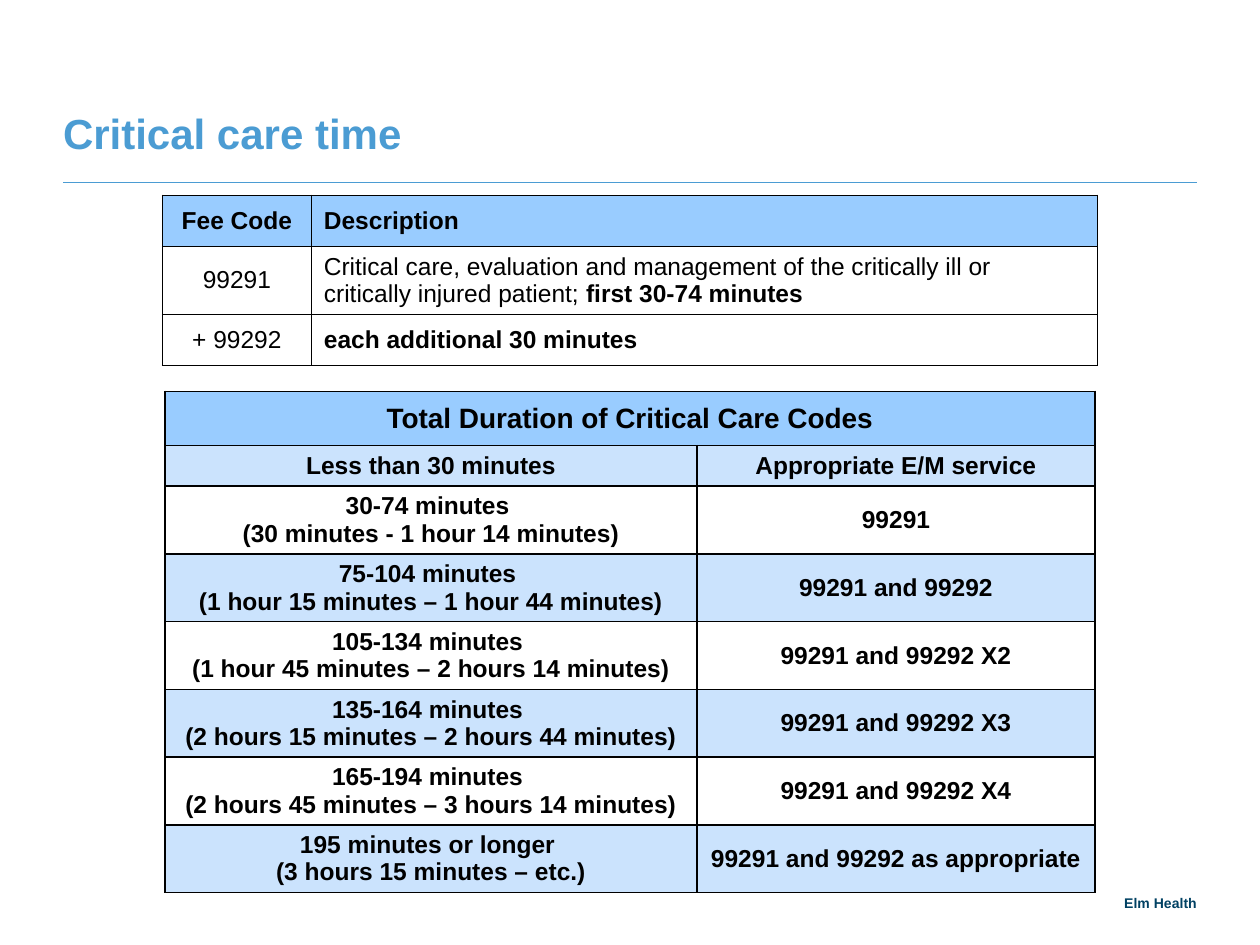
import pptx
import pptx.dml.color
import pptx.enum.shapes
import pptx.enum.text
import pptx.util
from lxml import etree
from pptx.oxml.ns import qn

Pt = pptx.util.Pt
ALIGN = pptx.enum.text.PP_ALIGN
ANCHOR = pptx.enum.text.MSO_ANCHOR

BLACK, WHITE = "000000", "FFFFFF"
SKY, NAVY = "4B9CD3", "004163"
HEADER_BLUE, BAND_BLUE = "99CCFF", "CBE3FD"

# Each cell is a list of paragraphs, each paragraph a list of (text, bold) runs.
CODES = [
    ([[("Fee Code", True)]], [[("Description", True)]]),
    ([[("99291", False)]],
     [[("Critical care, evaluation and management of the critically ill or "
        "critically injured patient; ", False), ("first 30-74 minutes", True)]]),
    ([[("+ 99292", False)]], [[("each additional 30 minutes", True)]]),
]

DURATIONS = [
    (["Less than 30 minutes"], "Appropriate E/M service"),
    (["30-74 minutes ", "(30 minutes - 1 hour 14 minutes)"], "99291"),
    (["75-104 minutes ", "(1 hour 15 minutes – 1 hour 44 minutes)"], "99291 and 99292"),
    (["105-134 minutes ", "(1 hour 45 minutes – 2 hours 14 minutes)"], "99291 and 99292 X2"),
    (["135-164 minutes ", "(2 hours 15 minutes – 2 hours 44 minutes)"], "99291 and 99292 X3"),
    (["165-194 minutes ", "(2 hours 45 minutes – 3 hours 14 minutes)"], "99291 and 99292 X4"),
    (["195 minutes or longer ", "(3 hours 15 minutes – etc.)"], "99291 and 99292 as appropriate"),
]


def rgb(value):
    return pptx.dml.color.RGBColor.from_string(value)


def write(frame, paragraphs, size=14, color=BLACK, align=ALIGN.LEFT, spacing=None):
    """Fill a text frame with paragraphs of (text, bold) runs."""
    for index, runs in enumerate(paragraphs):
        paragraph = frame.paragraphs[0] if index == 0 else frame.add_paragraph()
        paragraph.alignment = align
        if spacing:
            paragraph.line_spacing = Pt(spacing)
        for text, bold in runs:
            run = paragraph.add_run()
            run.text = text
            run.font.name = "Arial"
            run.font.size = Pt(size)
            run.font.bold = bold
            run.font.color.rgb = rgb(color)


def set_frame(frame, left=0, top=0, right=0, bottom=0):
    frame.word_wrap = True
    frame.auto_size = pptx.enum.text.MSO_AUTO_SIZE.NONE
    frame.vertical_anchor = ANCHOR.BOTTOM
    frame.margin_left, frame.margin_top = Pt(left), Pt(top)
    frame.margin_right, frame.margin_bottom = Pt(right), Pt(bottom)


def style_cell(cell, fill=None):
    """Set black borders, then the fill, as the schema orders them."""
    properties = cell._tc.get_or_add_tcPr()
    for side in ("a:lnL", "a:lnR", "a:lnT", "a:lnB"):
        border = etree.SubElement(properties, qn(side), w=str(Pt(1)))
        solid = etree.SubElement(border, qn("a:solidFill"))
        etree.SubElement(solid, qn("a:srgbClr"), val=BLACK)
    if fill:
        cell.fill.solid()
        cell.fill.fore_color.rgb = rgb(fill)
    else:
        cell.fill.background()
    cell.vertical_anchor = ANCHOR.MIDDLE


def add_grid(slide, left, top, widths, heights, fills):
    """Add a bordered table with one fill for each row."""
    table = slide.shapes.add_table(
        len(heights), len(widths), Pt(left), Pt(top),
        Pt(sum(widths)), Pt(sum(heights))).table
    for column, width in zip(table.columns, widths):
        column.width = Pt(width)
    for row, height, fill in zip(table.rows, heights, fills):
        row.height = Pt(height)
        for cell in row.cells:
            style_cell(cell, fill)
    return table


def add_heading(slide, left, top, width, height):
    title = slide.shapes.title
    title.left, title.top, title.width, title.height = map(Pt, (left, top, width, height))
    set_frame(title.text_frame, top=68.4, right=108)
    write(title.text_frame, [[("Critical care time", True)]], size=24, color=SKY, spacing=28)

    rule_y = Pt(top + height + 20.2)
    rule = slide.shapes.add_connector(
        pptx.enum.shapes.MSO_CONNECTOR.STRAIGHT,
        Pt(left), rule_y, Pt(left + width), rule_y)
    rule.line.color.rgb = rgb(SKY)
    rule.line.width = Pt(0.5)
    etree.SubElement(rule._element.spPr, qn("a:effectLst"))


def add_footer(slide, left, top, width, height):
    footer = slide.shapes.add_textbox(*map(Pt, (left, top, width, height)))
    set_frame(footer.text_frame)
    write(footer.text_frame, [[("Elm Health", True)]], size=8, color=NAVY, align=ALIGN.RIGHT)


def add_duration_table(slide, left, top, width):
    code_width = 227.4
    fills = [HEADER_BLUE] + [None if i % 2 else BAND_BLUE for i in range(len(DURATIONS))]
    heights = [31, 23.3] + [35.2] * (len(DURATIONS) - 1)
    table = add_grid(slide, left, top, [width - code_width, code_width], heights, fills)
    heading = table.cell(0, 0)
    heading.merge(table.cell(0, 1))
    write(heading.text_frame, [[("Total Duration of Critical Care Codes", True)]],
          size=16, align=ALIGN.CENTER)
    for row, (duration, codes) in enumerate(DURATIONS, start=1):
        for column, lines in enumerate((duration, [codes])):
            write(table.cell(row, column).text_frame,
                  [[(line, True)] for line in lines], align=ALIGN.CENTER)


def add_code_table(slide, left, top, width):
    code_width = 85
    table = add_grid(slide, left, top, [code_width, width - code_width],
                     [29.3] * len(CODES), [HEADER_BLUE, WHITE, WHITE])
    for row, (code, description) in enumerate(CODES):
        write(table.cell(row, 0).text_frame, code, align=ALIGN.CENTER)
        write(table.cell(row, 1).text_frame, description)


def main():
    deck = pptx.Presentation()
    deck.slide_width, deck.slide_height = Pt(720), Pt(540)
    slide = deck.slides.add_slide(deck.slide_layouts.get_by_name("Title Only"))
    add_footer(slide, 595.4, 504, 88.6, 16.6)
    add_heading(slide, 36, 27.4, 648, 56.8)
    add_duration_table(slide, 94.3, 223.6, 531.4)
    add_code_table(slide, 92.9, 111.6, 534.2)
    deck.save("out.pptx")


if __name__ == "__main__":
    main()
